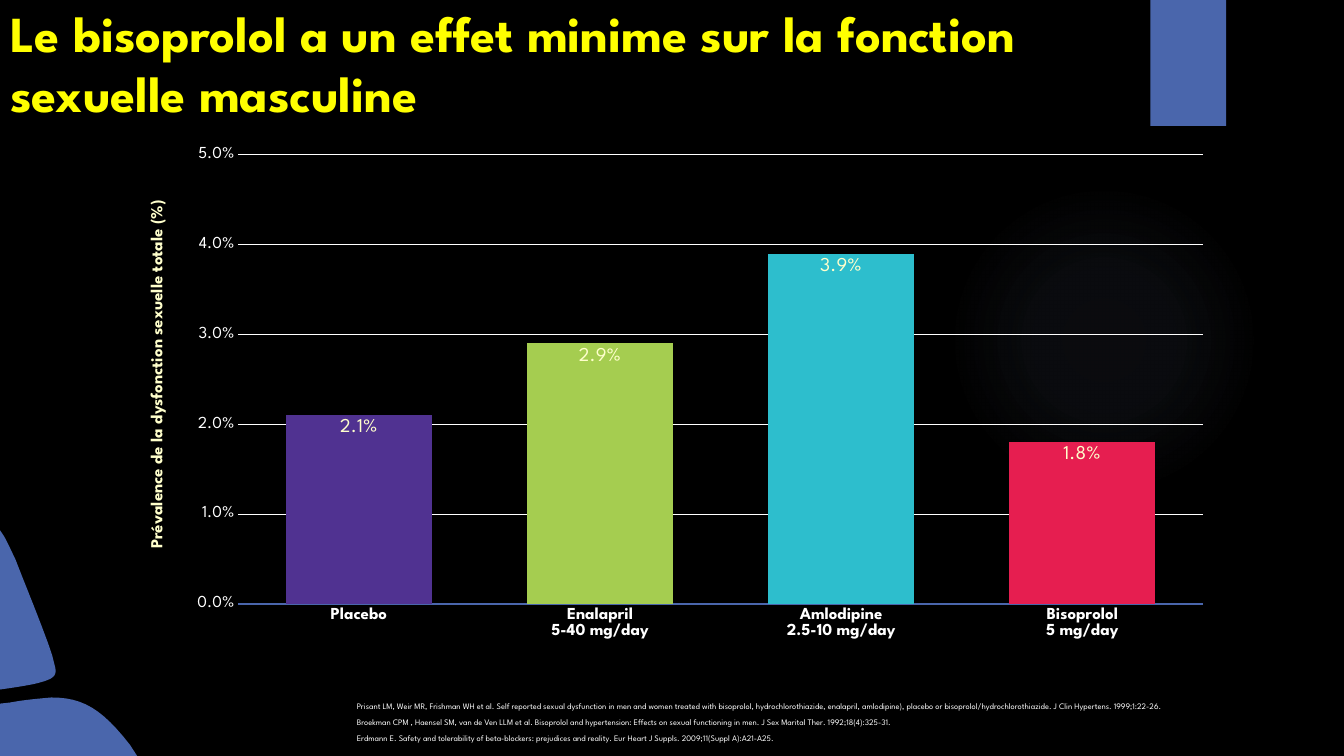
from lxml import etree
from pptx import Presentation
from pptx.chart.data import CategoryChartData
from pptx.dml.color import RGBColor
from pptx.enum.chart import XL_CHART_TYPE, XL_LABEL_POSITION, XL_TICK_MARK
from pptx.enum.shapes import MSO_SHAPE
from pptx.enum.text import MSO_ANCHOR, MSO_AUTO_SIZE, PP_ALIGN
from pptx.oxml import parse_xml
from pptx.oxml.ns import nsdecls, qn
from pptx.util import Pt

COLUMN = XL_CHART_TYPE.COLUMN_CLUSTERED
IN_END = XL_LABEL_POSITION.INSIDE_END
NO_TICK = XL_TICK_MARK.NONE
OVAL, RECT = MSO_SHAPE.OVAL, MSO_SHAPE.RECTANGLE
TOP, LEFT = MSO_ANCHOR.TOP, PP_ALIGN.LEFT
NO_FIT = MSO_AUTO_SIZE.NONE

# Content
FONT = "League Spartan"
WHITE, BLACK, BLUE, CREAM = "FFFFFF", "000000", "4A66AC", "FFFFCC"
TITLE = "Le bisoprolol a un effet minime sur la fonction sexuelle masculine"
AXIS = "Prévalence de la dysfonction sexuelle totale (%)"
BARS = [
    ("Placebo", 0.021, "503291"),
    ("Enalapril\n5-40 mg/day", 0.029, "A5CD50"),
    ("Amlodipine\n2.5-10 mg/day", 0.039, "2DBECD"),
    ("Bisoprolol\n5 mg/day", 0.018, "E61E50"),
]
NOTES = [
    "Prisant LM, Weir MR, Frishman WH et al. Self reported sexual dysfunction in men and women treated with bisoprolol, hydrochlorothiazide, enalapril, amlodipine), placebo or bisoprolol/hydrochlorothiazide. J Clin Hypertens. 1999;1:22-26.",
    "Broekman CPM , Haensel SM, van de Ven LLM et al. Bisoprolol and hypertension: Effects on sexual functioning in men. J Sex Marital Ther. 1992;18(4):325-31.",
    "Erdmann E. Safety and tolerability of beta-blockers: prejudices and reality. Eur Heart J Suppls. 2009;11(Suppl A):A21-A25.",
]
# Petals in points: a pair is a corner, three pairs are a curve
PETALS = [
    [(36.7, 498.2), ((59, 498.2), (72.7, 506.2), (92.9, 532.1)),
     ((98, 540), (98, 540), (98, 540)), (0, 540), (0, 502.6), (7.2, 501.8),
     ((18.7, 499.7), (28.1, 499), (36.7, 498.2))],
    [(0, 378.7), (2.9, 383), ((5.8, 388.1), (7.9, 393.1), (10.8, 398.9)),
     ((16.6, 414), (36.7, 463), (38.2, 471.6)),
     ((40.3, 480.2), (42.5, 483.8), (28.8, 487.4)),
     ((23.8, 488.9), (15.1, 490.3), (5, 491.8)), (0, 492.5)],
]


def color(code):
    return RGBColor.from_string(code)


def style(font, size, code=WHITE, bold=False):
    font.name, font.size, font.bold = FONT, Pt(size), bold
    font.color.rgb = color(code)


def write(frame, lines, size, code=WHITE, bold=False, gap=0, pitch=None):
    for i, line in enumerate(lines):
        para = frame.add_paragraph() if i else frame.paragraphs[0]
        para.alignment = LEFT
        para.space_before = Pt(gap if i else 0)
        if pitch:
            para.line_spacing = Pt(pitch)
        run = para.add_run()
        run.text = line
        style(run.font, size, code, bold)


def paint(shape, code):
    shape.shadow.inherit = False
    shape.fill.solid()
    shape.fill.fore_color.rgb = color(code)
    shape.line.fill.background()


def trace(steps, count=12):
    pts = [steps[0]]
    for step in steps[1:]:
        if not isinstance(step[0], tuple):
            pts.append(step)
            continue
        ctrl = (pts[-1], *step)
        for k in range(1, count + 1):
            t = k / count
            part = ((1 - t) ** 3, 3 * t * (1 - t) ** 2, 3 * t * t * (1 - t), t ** 3)
            pts.append(tuple(sum(w * c[n] for w, c in zip(part, ctrl)) for n in (0, 1)))
    return pts


def place(node, index, **parts):
    """Give a chart part a manual layout."""
    for old in node.findall(qn("c:layout")):
        node.remove(old)
    lay = parse_xml(f"<c:layout {nsdecls('c')}><c:manualLayout/></c:layout>")
    for name, val in parts.items():
        etree.SubElement(lay[0], qn("c:" + name)).set("val", str(val))
    node.insert(index, lay)


deck = Presentation()
deck.slide_width, deck.slide_height = Pt(960), Pt(540)
slide = deck.slides.add_slide(deck.slide_layouts[5])
slide.background.fill.solid()
slide.background.fill.fore_color.rgb = color(BLACK)
shapes = slide.shapes

# Soft glow
glow = shapes.add_shape(OVAL, Pt(677.5), Pt(131.8), Pt(221.8), Pt(221.8))
paint(glow, BLACK)
stops = "".join(
    f'<a:gs pos="{pos}000"><a:srgbClr val="90A2CF"><a:alpha val="{alpha}000"/></a:srgbClr></a:gs>'
    for pos, alpha in ((0, 7), (36, 6), (69, 0), (100, 0)))
fade = parse_xml(
    f'<a:gradFill {nsdecls("a")}><a:gsLst>{stops}</a:gsLst><a:path path="circle">'
    '<a:fillToRect l="50000" t="50000" r="50000" b="50000"/></a:path></a:gradFill>')
props = glow._element.spPr
props.replace(props.find(qn("a:solidFill")), fade)

# Blue tab and petals
paint(shapes.add_shape(RECT, Pt(821.8), 0, Pt(54), Pt(90)), BLUE)
for steps in PETALS:
    pts = [(Pt(x), Pt(y)) for x, y in trace(steps)]
    form = shapes.build_freeform(*pts[0])
    form.add_line_segments(pts[1:], close=True)
    paint(form.convert_to_shape(), BLUE)

# Title
title = shapes.title
title.left, title.top, title.width, title.height = 0, Pt(-2.2), Pt(786.2), Pt(26)
head = title.text_frame
head.word_wrap, head.auto_size, head.vertical_anchor = True, NO_FIT, TOP
write(head, [TITLE], 36, "FFFF00", True, pitch=43)

# References
box = shapes.add_textbox(Pt(251.3), Pt(497.5), Pt(708.7), Pt(37.4))
notes = box.text_frame
notes.word_wrap = True
notes.margin_left = notes.margin_right = Pt(3.6)
write(notes, NOTES, 6, gap=4)

# Chart
data = CategoryChartData(number_format="0.0%")
data.categories = [name for name, _, _ in BARS]
data.add_series("Series 1", [val for _, val, _ in BARS])
chart = shapes.add_chart(COLUMN, Pt(88.6), Pt(68.4), Pt(771.1), Pt(402.5), data).chart
chart.has_legend = chart.has_title = False
style(chart.font, 10)
place(chart._chartSpace.chart.plotArea, 0, layoutTarget="inner", xMode="edge",
      yMode="edge", x=0.106, y=0.105, w=0.894, h=0.797)

plot = chart.plots[0]
plot.gap_width, plot.overlap, plot.vary_by_categories = 65, 65, False
series = plot.series[0]
for i, (_, _, code) in enumerate(BARS):
    fill = series.points[i].format.fill
    fill.solid()
    fill.fore_color.rgb = color(code)
labels = series.data_labels
labels.show_value, labels.position = True, IN_END
labels.number_format, labels.number_format_is_linked = "0.0%", False
style(labels.font, 14, CREAM)

# Axes
cats, vals = chart.category_axis, chart.value_axis
for axis in (cats, vals):
    axis.major_tick_mark = axis.minor_tick_mark = NO_TICK
    style(axis.tick_labels.font, 12, bold=axis is cats)
cats.format.line.color.rgb, cats.format.line.width = color(BLUE), Pt(1)
vals.format.line.fill.background()
vals.minimum_scale, vals.maximum_scale, vals.major_unit = 0, 0.05, 0.01
vals.tick_labels.number_format = "0.0%"
vals.tick_labels.number_format_is_linked = False
vals.has_major_gridlines = True
grid = vals.major_gridlines.format.line
grid.color.rgb, grid.width = color(WHITE), Pt(0.75)
name = vals.axis_title
write(name.text_frame, [AXIS], 12, CREAM, True)
node = name._element
node.find(".//" + qn("a:bodyPr")).set("rot", "-5400000")
place(node, 1, xMode="edge", yMode="edge", x=0.02, y=0.18)

deck.save("out.pptx")
